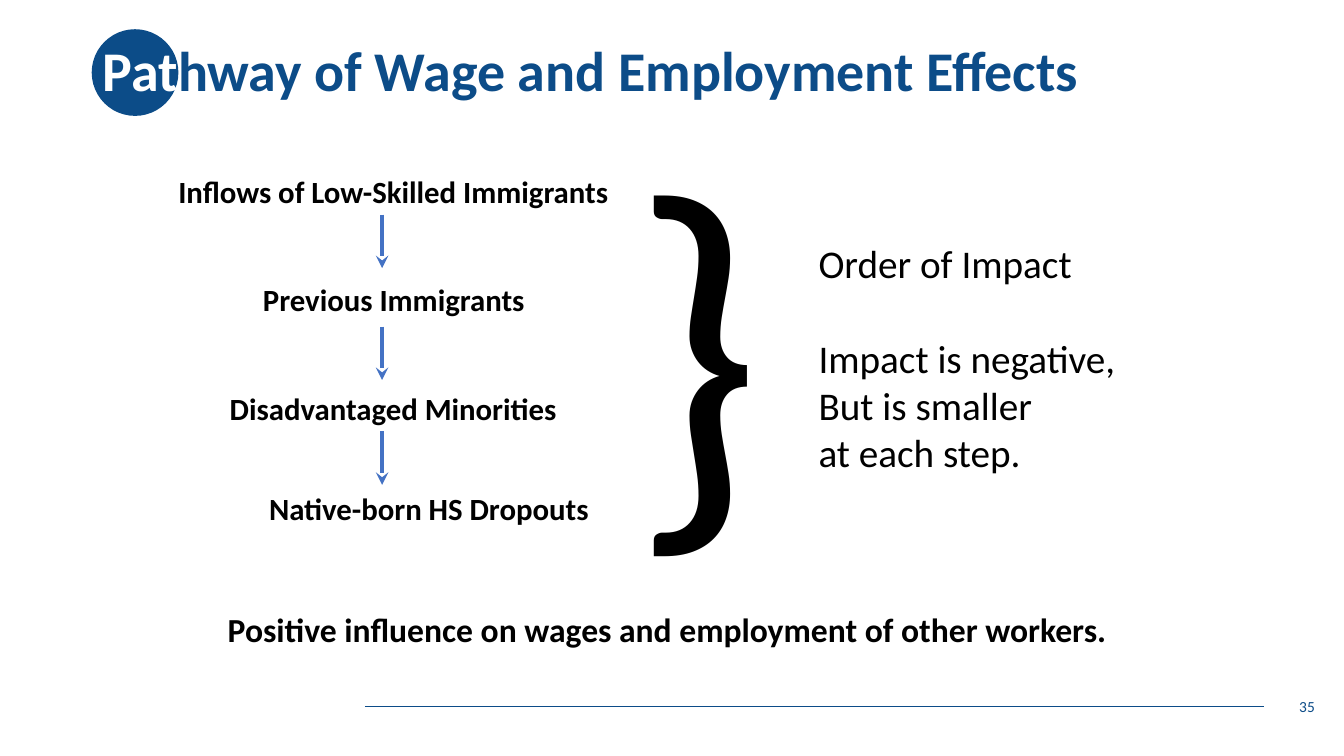
from pptx import Presentation
from pptx.dml.color import RGBColor
from pptx.enum.shapes import MSO_CONNECTOR, MSO_SHAPE
from pptx.enum.text import MSO_ANCHOR, MSO_AUTO_SIZE, PP_ALIGN
from pptx.oxml.ns import qn
from pptx.util import Inches, Pt
from lxml import etree

STRAIGHT = MSO_CONNECTOR.STRAIGHT
OVAL = MSO_SHAPE.OVAL
MIDDLE = MSO_ANCHOR.MIDDLE
FIT_SHAPE = MSO_AUTO_SIZE.SHAPE_TO_FIT_TEXT
LEFT, RIGHT = PP_ALIGN.LEFT, PP_ALIGN.RIGHT

FONT = "Calibri"
NAVY, BLUE, BLACK, WHITE = "0C4C88", "4472C4", "000000", "FFFFFF"

TITLE = [("Pat", WHITE), ("hway of Wage and Employment Effects", NAVY)]
STEPS = [
    ("Inflows of Low-Skilled Immigrants", 1.67, 1.66, 4.59),
    ("Previous Immigrants", 2.51, 2.74, 2.83),
    ("Disadvantaged Minorities", 2.18, 3.82, 3.48),
    ("Native-born HS Dropouts", 2.57, 4.81, 3.41),
]
STEP_HEIGHT = 0.47
ARROW_X, ARROW_LENGTH = 3.79, 0.53
ARROW_TOPS = [2.13, 3.24, 4.28]
IMPACT = ["Order of Impact", "Impact is negative,", "But is smaller", "at each step."]
CONCLUSION = "Positive influence on wages and employment of other workers."
PAGE_NUMBER = "35"


def color(value):
    return RGBColor.from_string(value)


def style(font, size, fill, bold=False):
    font.name = FONT
    font.size = Pt(size)
    font.bold = bold
    font.color.rgb = color(fill)


def add_text(page, lines, place, size, fill=BLACK, bold=False, wrap=False):
    box = page.shapes.add_textbox(*map(Inches, place))
    frame = box.text_frame
    frame.text = "\n".join(lines)
    frame.word_wrap = wrap
    frame.auto_size = FIT_SHAPE
    for para in frame.paragraphs:
        for span in para.runs:
            style(span.font, size, fill, bold)
    return box


def add_line(page, start, end, fill, width):
    line = page.shapes.add_connector(STRAIGHT, *map(Inches, start + end))
    line.line.color.rgb = color(fill)
    line.line.width = Pt(width)
    etree.SubElement(line.element.spPr, qn("a:effectLst"))
    return line


def add_title(page):
    circle = page.shapes.add_shape(OVAL, *map(Inches, (0.91, 0.29, 0.86, 0.86)))
    circle.shadow.inherit = False
    circle.fill.solid()
    circle.fill.fore_color.rgb = color(NAVY)
    circle.line.fill.background()

    title = page.shapes.title
    title.left, title.top, title.width, title.height = map(Inches, (0.92, 0, 11.5, 1.45))
    title.text_frame.vertical_anchor = MIDDLE
    para = title.text_frame.paragraphs[0]
    para.alignment = LEFT
    para.line_spacing = 0.9
    for text, fill in TITLE:
        span = para.add_run()
        span.text = text
        style(span.font, 40, fill, True)
    circle.element.addnext(title.element)


def add_footer(page):
    add_line(page, (3.62, 7.01), (12.54, 7.01), NAVY, 0.5)
    number = add_text(page, [PAGE_NUMBER], (10.14, 6.81, 3, 0.4), 11, NAVY, wrap=True)
    number.text_frame.auto_size = MSO_AUTO_SIZE.NONE
    number.text_frame.vertical_anchor = MIDDLE
    number.text_frame.paragraphs[0].alignment = RIGHT


def add_pathway(page):
    for text, left, top, width in STEPS:
        add_text(page, [text], (left, top, width, STEP_HEIGHT), 22, bold=True)
    for top in ARROW_TOPS:
        arrow = add_line(page, (ARROW_X, top), (ARROW_X, top + ARROW_LENGTH), BLUE, 3)
        outline = arrow.line._get_or_add_ln()
        etree.SubElement(outline, qn("a:tailEnd"), type="stealth")


def main():
    deck = Presentation()
    deck.slide_width, deck.slide_height = Inches(13.33), Inches(7.5)
    page = deck.slides.add_slide(deck.slide_layouts[5])
    add_title(page)
    add_footer(page)
    add_pathway(page)
    add_text(page, ["}"], (6.16, 0.74, 0.85, 5.15), 300, wrap=True)
    impact = add_text(page, IMPACT, (8.02, 2.33, 3.27, 2.46), 28)
    impact.text_frame.paragraphs[1].space_before = Pt(34)
    add_text(page, [CONCLUSION], (2.16, 5.99, 9.01, 0.5), 24, bold=True)
    deck.save("out.pptx")


if __name__ == "__main__":
    main()
